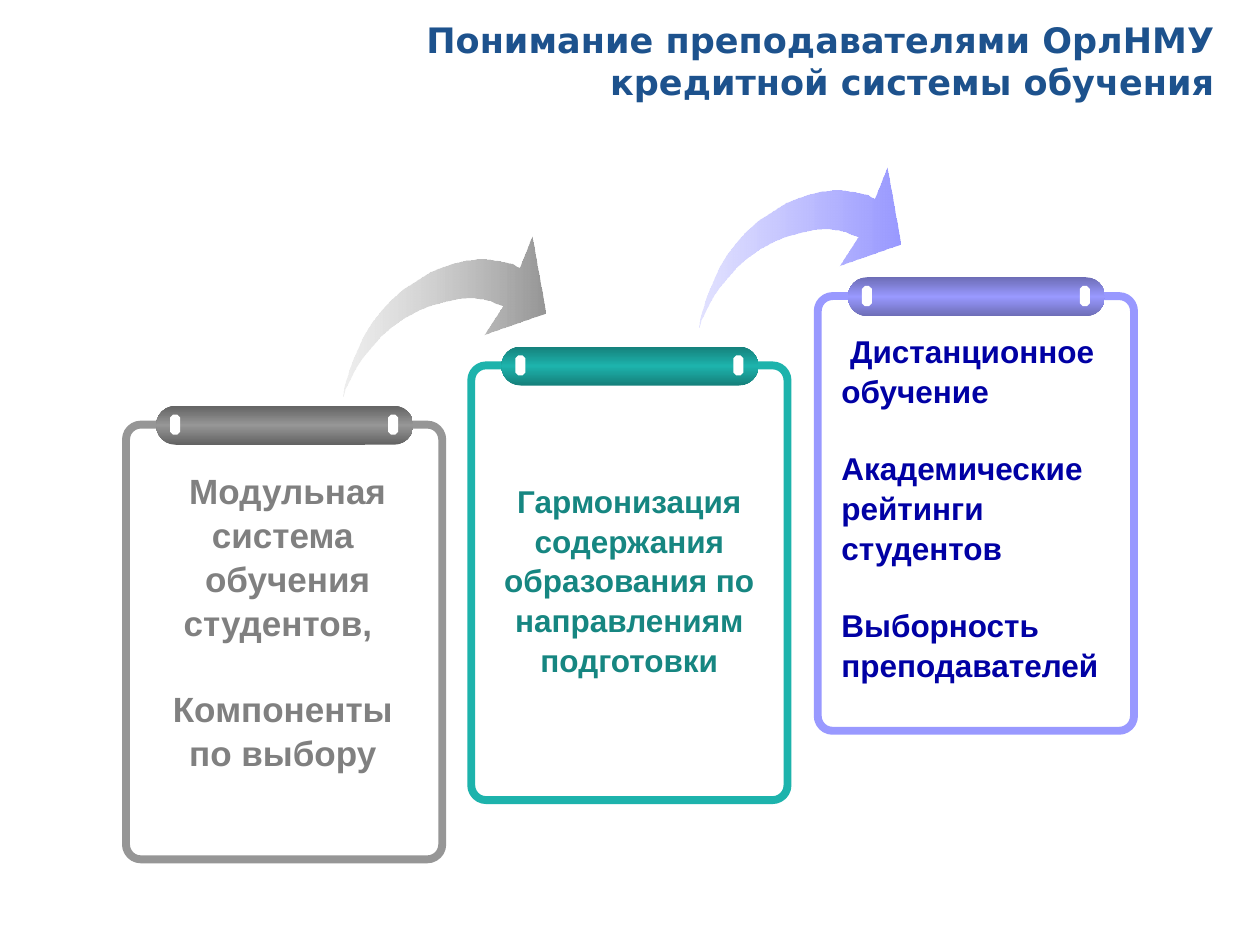
import pptx
import pptx.util
import pptx.dml.color
import pptx.enum.shapes
import pptx.enum.text
import pptx.oxml
import pptx.oxml.ns

RGBColor = pptx.dml.color.RGBColor
Shapes = pptx.enum.shapes.MSO_SHAPE
Align = pptx.enum.text.PP_ALIGN
Anchor = pptx.enum.text.MSO_ANCHOR

WHITE = RGBColor(0xFF, 0xFF, 0xFF)
NAVY = RGBColor(0x1D, 0x52, 0x8D)
GRAY = RGBColor(0x96, 0x96, 0x96)
DARK_GRAY = RGBColor(0x63, 0x63, 0x63)
LIGHT_GRAY = RGBColor(0xCB, 0xCB, 0xCB)
TEXT_GRAY = RGBColor(0x80, 0x80, 0x80)
TEAL = RGBColor(0x1D, 0xB3, 0xAC)
DARK_TEAL = RGBColor(0x15, 0x80, 0x7B)
TEXT_TEAL = RGBColor(0x16, 0x86, 0x81)
VIOLET = RGBColor(0x99, 0x99, 0xFF)
DARK_VIOLET = RGBColor(0x6D, 0x6D, 0xB6)
LIGHT_VIOLET = RGBColor(0xA6, 0xA6, 0xFF)
TEXT_BLUE = RGBColor(0x00, 0x00, 0xA4)

COLUMNS, ROWS = 100, 75
CELL = pptx.util.Inches(0.1)
CARD_SIZE = (25.1, 34.5)

ARROW_POINTS = [
    (0, 127), (1, 123), (2, 120), (5, 114), (8, 108), (12, 101), (17, 94),
    (23, 87), (30, 79), (38, 72), (48, 65), (59, 59), (69, 55), (80, 52),
    (89, 50), (97, 49), (104, 49), (111, 50), (116, 51), (120, 53), (126, 55),
    (111, 78), (160, 61), (149, 0), (139, 25), (137, 24), (134, 22), (130, 21),
    (125, 20), (119, 19), (113, 18), (105, 18), (97, 19), (88, 21), (79, 24),
    (69, 28), (58, 35), (47, 42), (37, 51), (29, 60), (22, 69), (16, 79),
    (12, 88), (8, 97), (5, 105), (3, 112), (1, 118), (0, 126),
]


def cells(*lengths):
    return [round(length * CELL) for length in lengths]


def set_gradient(shape, stops, angle):
    shape.fill.gradient()
    gradient = shape.fill.gradient_stops
    shape.fill.gradient_angle = 0
    fill = shape._element.spPr.find(pptx.oxml.ns.qn("a:gradFill"))
    stop_list = fill.find(pptx.oxml.ns.qn("a:gsLst"))
    for stop in list(stop_list):
        stop_list.remove(stop)
    for position, color, opacity in stops:
        stop_list.append(pptx.oxml.parse_xml(
            f'<a:gs {pptx.oxml.ns.nsdecls("a")} pos="{position * 1000}">'
            f'<a:srgbClr val="{color}"><a:alpha val="{opacity * 1000}"/></a:srgbClr></a:gs>'))
    fill.find(pptx.oxml.ns.qn("a:lin")).set("ang", str(angle * 60000))


def add_plain_shape(page, kind, box, adjustment):
    shape = page.shapes.add_shape(kind, *cells(*box))
    shape.adjustments[0] = adjustment
    shape.shadow.inherit = False
    shape.line.fill.background()
    return shape


def add_text(page, box, lines, font_name, size, color, align, spacing=1.0, gaps=None):
    frame = page.shapes.add_textbox(*cells(*box)).text_frame
    frame.word_wrap = True
    for index, line in enumerate(lines):
        para = frame.paragraphs[0] if index == 0 else frame.add_paragraph()
        para.text = line
        para.alignment = align
        para.line_spacing = spacing
        para.space_before = pptx.util.Pt((gaps or {}).get(index, 0))
        para.font.name = font_name
        para.font.size = pptx.util.Pt(size)
        para.font.bold = True
        para.font.color.rgb = color
    return frame


def add_title(page, box):
    frame = add_text(page, box, ["Понимание преподавателями ОрлНМУ кредитной системы обучения"],
                     "DejaVu Sans", 20, NAVY, Align.RIGHT)
    frame.vertical_anchor = Anchor.MIDDLE
    frame.margin_right = pptx.util.Inches(0.2)


def add_arrow(page, left, top, light, color):
    builder = page.shapes.build_freeform(*ARROW_POINTS[0], scale=CELL / 10)
    builder.add_line_segments(ARROW_POINTS[1:], close=True)
    arrow = builder.convert_to_shape(*cells(left, top))
    arrow.shadow.inherit = False
    arrow.line.fill.background()
    set_gradient(arrow, [(0, light, 32), (100, color, 100)], 0)


def add_clipboard(page, left, top, color, dark):
    board = add_plain_shape(page, Shapes.ROUNDED_RECTANGLE, (left, top, *CARD_SIZE), 0.047)
    board.fill.background()
    board.line.color.rgb = color
    board.line.width = pptx.util.Pt(4.5)
    bar = add_plain_shape(page, Shapes.ROUNDED_RECTANGLE, (left + 2.4, top - 1.5, 20.4, 3.1), 0.5)
    set_gradient(bar, [(0, dark, 100), (50, color, 100), (100, dark, 100)], 90)
    for offset in (20.8, 3.5):
        hole = add_plain_shape(page, Shapes.OCTAGON, (left + offset, top - 0.8, 0.8, 1.6), 0.293)
        hole.fill.solid()
        hole.fill.fore_color.rgb = WHITE


def main():
    deck = pptx.Presentation()
    deck.slide_width, deck.slide_height = cells(COLUMNS, ROWS)
    page = deck.slides.add_slide(deck.slide_layouts[6])

    add_title(page, (18.7, 1.7, 79.7, 6.2))
    add_arrow(page, 55.5, 13.3, LIGHT_VIOLET, VIOLET)
    add_clipboard(page, 37.4, 29, TEAL, DARK_TEAL)
    add_clipboard(page, 64.9, 23.5, VIOLET, DARK_VIOLET)
    add_arrow(page, 27.3, 18.8, LIGHT_GRAY, GRAY)
    add_clipboard(page, 10, 33.7, GRAY, DARK_GRAY)

    add_text(page, (10.8, 36.6, 23.3, 31),
             [" Модульная система", " обучения студентов, ", "Компоненты по выбору"],
             "Arial", 20, TEXT_GRAY, Align.CENTER, 1.05, {2: 24})
    harmony = add_text(page, (38.3, 31.6, 23.3, 25.6),
                       ["Гармонизация содержания образования по направлениям подготовки"],
                       "Arial", 18, TEXT_TEAL, Align.CENTER, 1.05)
    harmony.margin_top = pptx.util.Inches(0.65)
    add_text(page, (65.8, 25.7, 23.3, 31.3),
             [" Дистанционное обучение", "Академические рейтинги студентов",
              "Выборность преподавателей"],
             "Arial", 18, TEXT_BLUE, Align.LEFT, 1.05, {1: 21.7, 2: 21.7})

    deck.save("out.pptx")


if __name__ == "__main__":
    main()
